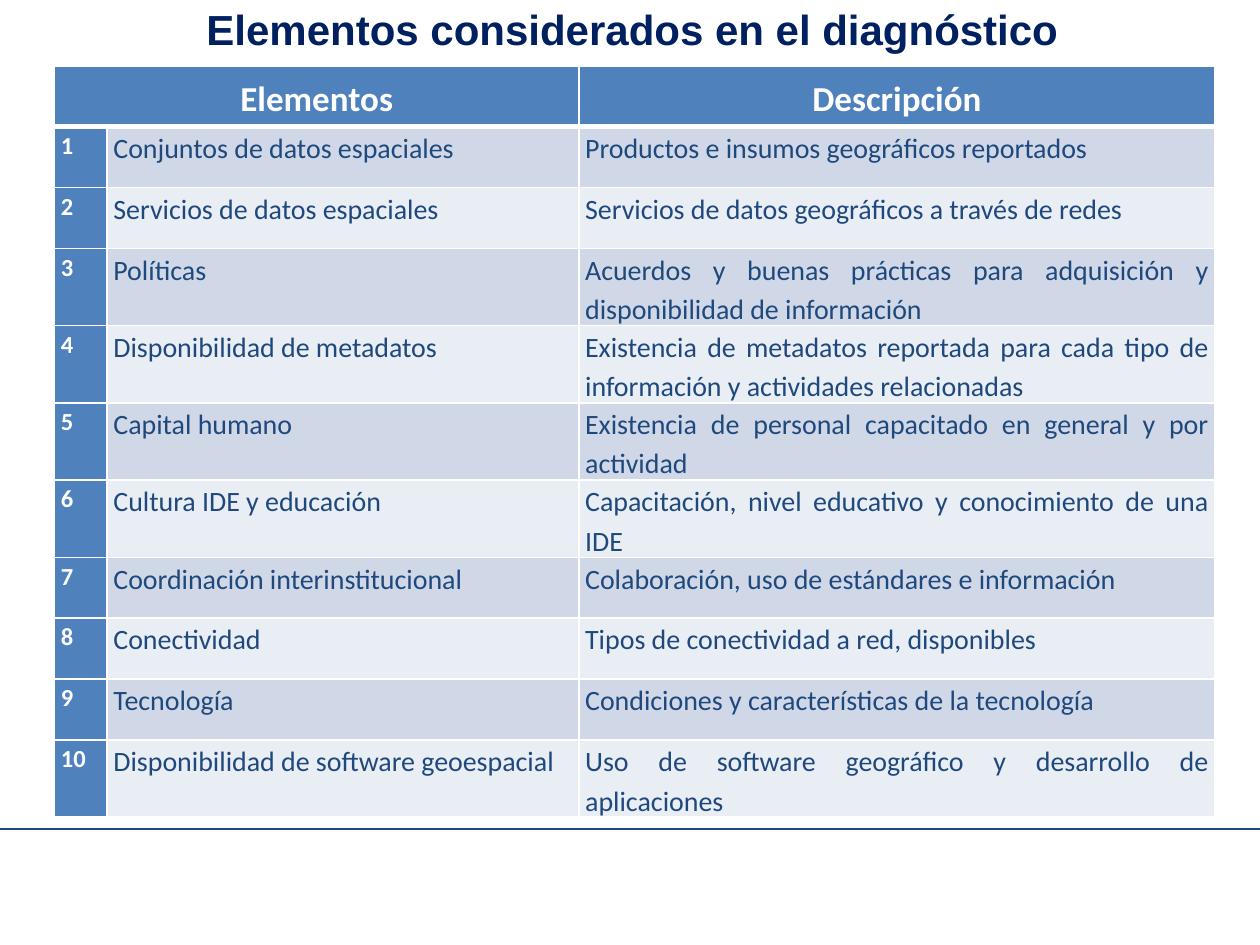
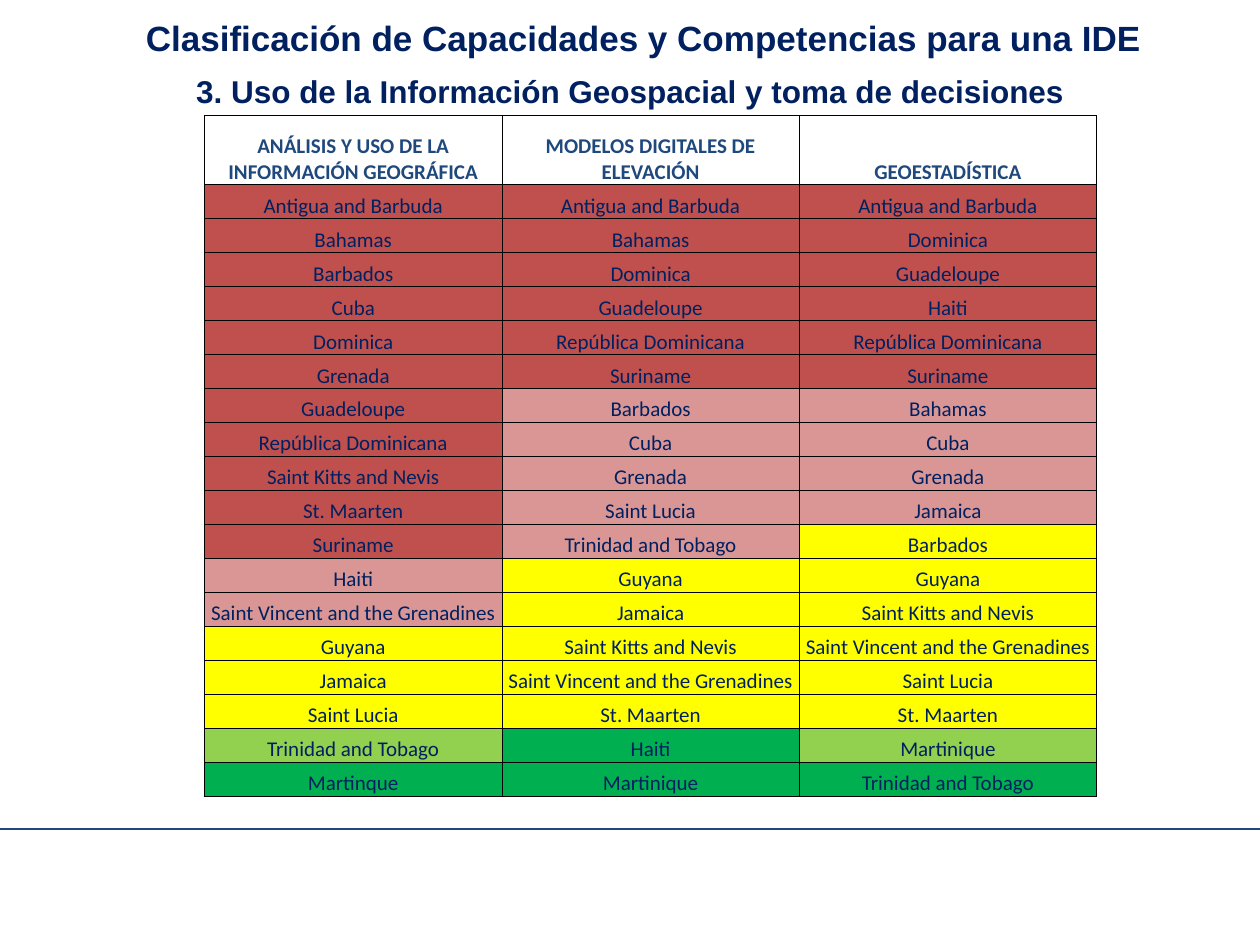
"""Build two slides on the spatial data infrastructure diagnosis."""
import lxml.etree
import pptx
import pptx.dml.color
import pptx.enum.shapes
import pptx.enum.text
import pptx.oxml.ns
import pptx.util

Pt = pptx.util.Pt
RGBColor = pptx.dml.color.RGBColor
Align = pptx.enum.text.PP_ALIGN
Anchor = pptx.enum.text.MSO_ANCHOR
qn = pptx.oxml.ns.qn

NAVY = RGBColor(0x00, 0x20, 0x60)
BLUE = RGBColor(0x1F, 0x49, 0x7D)
HEADER_BLUE = RGBColor(0x4F, 0x81, 0xBD)
BAND_DARK = RGBColor(0xD0, 0xD8, 0xE8)
BAND_LIGHT = RGBColor(0xE9, 0xED, 0xF4)
WHITE = RGBColor(0xFF, 0xFF, 0xFF)
BLACK = RGBColor(0x00, 0x00, 0x00)
RED = RGBColor(0xC0, 0x50, 0x4D)
PINK = RGBColor(0xD9, 0x96, 0x94)
YELLOW = RGBColor(0xFF, 0xFF, 0x00)
LIGHT_GREEN = RGBColor(0x92, 0xD0, 0x50)
GREEN = RGBColor(0x00, 0xB0, 0x50)
LEVEL_COLOURS = [RED, PINK, YELLOW, LIGHT_GREEN, GREEN]

ELEMENTS = [
    ("Conjuntos de datos espaciales", "Productos e insumos geográficos reportados"),
    ("Servicios de datos espaciales", "Servicios de datos geográficos a través de redes"),
    ("Políticas", "Acuerdos y buenas prácticas para adquisición y disponibilidad de información"),
    ("Disponibilidad de metadatos",
     "Existencia de metadatos reportada para cada tipo de información y actividades relacionadas"),
    ("Capital humano", "Existencia de personal capacitado en general y por actividad"),
    ("Cultura IDE y educación", "Capacitación, nivel educativo y conocimiento de una IDE"),
    ("Coordinación interinstitucional", "Colaboración, uso de estándares e información"),
    ("Conectividad", "Tipos de conectividad a red, disponibles"),
    ("Tecnología", "Condiciones y características de la tecnología"),
    ("Disponibilidad de software geoespacial",
     "Uso de software geográfico y desarrollo de aplicaciones"),
]

CAPACITIES = {
    "ANÁLISIS Y USO DE LA INFORMACIÓN GEOGRÁFICA": [
        ["Antigua and Barbuda", "Bahamas", "Barbados", "Cuba", "Dominica", "Grenada",
         "Guadeloupe", "República Dominicana", "Saint Kitts and Nevis", "St. Maarten", "Suriname"],
        ["Haiti", "Saint Vincent and the Grenadines"],
        ["Guyana", "Jamaica", "Saint Lucia"],
        ["Trinidad and Tobago"],
        ["Martinque"],
    ],
    "MODELOS DIGITALES DE ELEVACIÓN": [
        ["Antigua and Barbuda", "Bahamas", "Dominica", "Guadeloupe", "República Dominicana",
         "Suriname"],
        ["Barbados", "Cuba", "Grenada", "Saint Lucia", "Trinidad and Tobago"],
        ["Guyana", "Jamaica", "Saint Kitts and Nevis", "Saint Vincent and the Grenadines",
         "St. Maarten"],
        [],
        ["Haiti", "Martinique"],
    ],
    "GEOESTADÍSTICA": [
        ["Antigua and Barbuda", "Dominica", "Guadeloupe", "Haiti", "República Dominicana",
         "Suriname"],
        ["Bahamas", "Cuba", "Grenada", "Jamaica"],
        ["Barbados", "Guyana", "Saint Kitts and Nevis", "Saint Vincent and the Grenadines",
         "Saint Lucia", "St. Maarten"],
        ["Martinique"],
        ["Trinidad and Tobago"],
    ],
}


def write_text(frame, text, colour, font_format, para_format):
    """Write one formatted paragraph into a text frame."""
    para = frame.paragraphs[0]
    span = para.add_run()
    span.text = text
    span.font.color.rgb = colour
    for target, values in ((span.font, font_format), (para, para_format)):
        for name, value in values.items():
            setattr(target, name, value)


def style_cell(cell, fill, cell_format, line_colour, line_widths):
    """Set the margins, the borders (left, right, top, bottom) and the fill of a cell."""
    for name, value in cell_format.items():
        setattr(cell, name, value)
    properties = cell._tc.get_or_add_tcPr()
    for side, width in zip("LRTB", line_widths):
        line = lxml.etree.SubElement(properties, qn(f"a:ln{side}"), w=str(Pt(width)))
        solid = lxml.etree.SubElement(line, qn("a:solidFill"))
        lxml.etree.SubElement(solid, qn("a:srgbClr"), val=str(line_colour))
    cell.fill.solid()
    cell.fill.fore_color.rgb = fill


deck = pptx.Presentation()
deck.slide_width, deck.slide_height = Pt(720), Pt(540)

TITLES = [
    [("Elementos considerados en el diagnóstico", 24, (110.9, -1.4, 527, 36), {})],
    [("3. Uso de la Información Geospacial y toma de decisiones", 18, (105, 37.4, 592.6, 29), {}),
     ("Clasificación de Capacidades y Competencias para una IDE", 20, (76.3, 4.3, 612, 32),
      {"alignment": Align.JUSTIFY, "line_spacing": 1.07, "space_after": Pt(8)})],
]
for titles in TITLES:
    page = deck.slides.add_slide(deck.slide_layouts[6])
    rule = page.shapes.add_connector(
        pptx.enum.shapes.MSO_CONNECTOR.STRAIGHT, Pt(0), Pt(473.8), Pt(720), Pt(473.8))
    rule.line.color.rgb = BLUE
    rule.line.width = Pt(0.75)
    lxml.etree.SubElement(rule._element.spPr, qn("a:effectLst"))
    for text, size, bounds, para_format in titles:
        box = page.shapes.add_textbox(*(Pt(length) for length in bounds))
        box.text_frame.word_wrap = True
        write_text(box.text_frame, text, NAVY,
                   {"name": "Arial", "size": Pt(size), "bold": True}, para_format)

elements_page, capacities_page = deck.slides

elements = elements_page.shapes.add_table(
    len(ELEMENTS) + 1, 3, Pt(31.2), Pt(37.6), Pt(663.2), Pt(384)).table
for column, width in zip(elements.columns, (30, 269.6, 363.6)):
    column.width = Pt(width)
for row in elements.rows:
    row.height = Pt(34.8)
elements.rows[len(ELEMENTS)].height = Pt(36.7)

margins = {"margin_left": Pt(3.6), "margin_right": Pt(3.6),
           "margin_top": Pt(0), "margin_bottom": Pt(0)}
header_font = {"name": "Calibri", "size": Pt(20), "bold": True}
number_font = {"name": "Calibri", "size": Pt(14), "bold": True}
body_font = {"name": "Calibri", "size": Pt(16), "bold": False}
spaced = {"line_spacing": 1.15}

elements.cell(0, 0).merge(elements.cell(0, 1))
for index in range(3):
    style_cell(elements.cell(0, index), HEADER_BLUE,
               {**margins, "vertical_anchor": Anchor.MIDDLE}, WHITE, (1, 1, 1, 3))
for index, text in ((0, "Elementos"), (2, "Descripción")):
    write_text(elements.cell(0, index).text_frame, text, WHITE, header_font,
               {**spaced, "alignment": Align.CENTER})
for number, (element, description) in enumerate(ELEMENTS, 1):
    band = BAND_DARK if number % 2 else BAND_LIGHT
    entries = [
        (str(number), HEADER_BLUE, WHITE, number_font, spaced),
        (element, band, BLUE, body_font, spaced),
        (description, band, BLUE, body_font, {**spaced, "alignment": Align.JUSTIFY}),
    ]
    for index, (text, fill, colour, font_format, para_format) in enumerate(entries):
        cell = elements.cell(number, index)
        style_cell(cell, fill, margins, WHITE, (1, 1, 3 if number == 1 else 1, 1))
        write_text(cell.text_frame, text, colour, font_format, para_format)

capacities = capacities_page.shapes.add_table(
    19, 3, Pt(116.9), Pt(66), Pt(509.76), Pt(389.52)).table
for column in capacities.columns:
    column.width = Pt(169.92)
for row in capacities.rows:
    row.height = Pt(19.44)
capacities.rows[0].height = Pt(39.6)

bottom_cell = {"margin_left": Pt(0), "margin_right": Pt(0), "margin_top": Pt(0),
               "margin_bottom": Pt(0), "vertical_anchor": Anchor.BOTTOM}
for index, (heading, levels) in enumerate(CAPACITIES.items()):
    entries = [(heading, WHITE, BLUE, True)]
    for fill, countries in zip(LEVEL_COLOURS, levels):
        entries += [(country, fill, NAVY, False) for country in countries]
    for row_index, (text, fill, colour, bold) in enumerate(entries):
        cell = capacities.cell(row_index, index)
        style_cell(cell, fill, bottom_cell, BLACK, (0.5, 0.5, 0.5, 0.5))
        write_text(cell.text_frame, text, colour,
                   {"name": "Calibri", "size": Pt(12), "bold": bold},
                   {"alignment": Align.CENTER})

deck.save("out.pptx")
